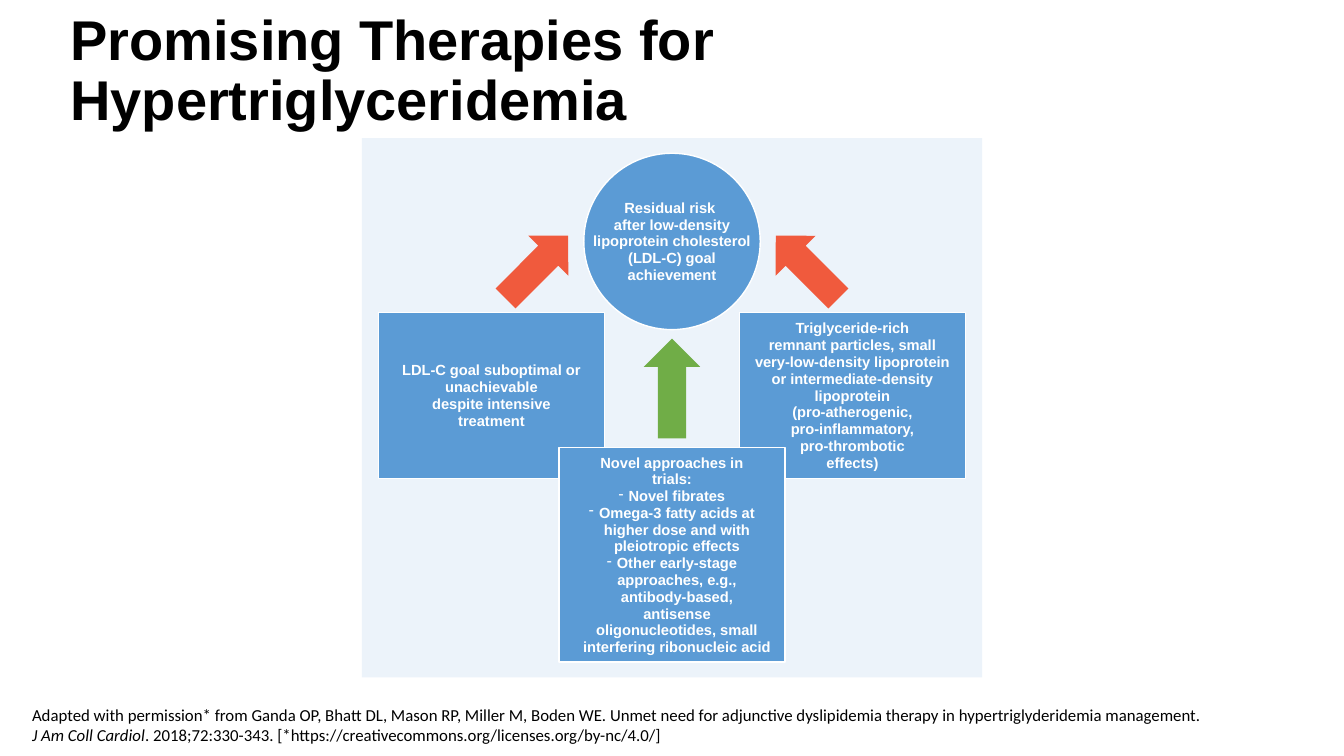
from lxml import etree
from pptx import Presentation
from pptx.dml.color import RGBColor
from pptx.enum.shapes import MSO_SHAPE
from pptx.enum.text import MSO_ANCHOR, PP_ALIGN
from pptx.oxml.ns import qn
from pptx.util import Inches, Pt

RECT, OVAL, ARROW = MSO_SHAPE.RECTANGLE, MSO_SHAPE.OVAL, MSO_SHAPE.UP_ARROW
MIDDLE, TOP = MSO_ANCHOR.MIDDLE, MSO_ANCHOR.TOP
CENTER, LEFT = PP_ALIGN.CENTER, PP_ALIGN.LEFT

WIDE, HIGH = 13.33, 7.5
COLORS = {"panel": "ECF3FA", "node": "5B9BD5", "risk": "F05A3D",
          "trial": "70AD47", "white": "FFFFFF", "black": "000000"}

RISK = ["Residual risk \nafter low-density",
        "lipoprotein cholesterol\n(LDL-C) goal\nachievement"]
GOAL = ["LDL-C goal suboptimal or\nunachievable\ndespite intensive\ntreatment"]
REMNANT = ["Triglyceride-rich\nremnant particles, small\nvery-low-density lipoprotein\n"
           "or intermediate-density\nlipoprotein\n(pro-atherogenic,\n"
           "pro-inflammatory,\npro-thrombotic\neffects)"]
TRIALS = ["Novel approaches in\ntrials:",
          "- Novel fibrates",
          "- Omega-3 fatty acids at\nhigher dose and with\npleiotropic effects",
          "- Other early-stage\napproaches, e.g.,\nantibody-based,\nantisense\n"
          "oligonucleotides, small\ninterfering ribonucleic acid"]
CREDIT = ["Adapted with permission* from Ganda OP, Bhatt DL, Mason RP, Miller M, Boden WE. "
          "Unmet need for adjunctive dyslipidemia therapy in hypertriglyderidemia management.",
          "_J Am Coll Cardiol_. 2018;72:330-343. "
          "[*https://creativecommons.org/licenses.org/by-nc/4.0/]"]


def rgb(name):
    return RGBColor.from_string(COLORS[name])


def dash(para):
    props = para._p.get_or_add_pPr()
    props.set("marL", str(Inches(0.1)))
    props.set("indent", str(Inches(-0.1)))
    etree.SubElement(props, qn("a:buChar")).set("char", "-")


def write(shape, paras, size=10.5, font="Arial", color="white", bold=True,
          align=CENTER, anchor=MIDDLE, gap=None, wrap=False):
    """A leading "- " makes a dash bullet; text between underscores is italic."""
    frame = shape.text_frame
    frame.word_wrap, frame.vertical_anchor = wrap, anchor
    for i, text in enumerate(paras):
        para = frame.paragraphs[0] if i == 0 else frame.add_paragraph()
        if text.startswith("- "):
            dash(para)
            text = text[2:]
        para.alignment = align
        if gap:
            para.line_spacing = gap
        for j, part in enumerate(text.split("_")):
            for k, line in enumerate(part.split("\n")):
                if k:
                    para.add_line_break()
                if not line:
                    continue
                run = para.add_run()
                run.text = line
                run.font.size, run.font.name = Pt(size), font
                run.font.bold, run.font.italic = bold, j % 2 == 1
                run.font.color.rgb = rgb(color)


def draw(slide, kind, box, fill, line=None, turn=0):
    shape = slide.shapes.add_shape(kind, *map(Inches, box))
    shape.shadow.inherit = False
    shape.fill.solid()
    shape.fill.fore_color.rgb = rgb(fill)
    if line:
        shape.line.color.rgb = rgb(line)
        shape.line.width = Pt(1)
    else:
        shape.line.fill.background()
    shape.rotation = turn
    return shape


def label(slide, box, paras, **style):
    write(slide.shapes.add_textbox(*map(Inches, box)), paras,
          color="black", align=LEFT, wrap=True, **style)


def diagram(slide, box):
    """Nodes and arrows, placed by offset from the panel's centre line and top."""
    left, top, wide, _ = box
    mid = left + wide / 2
    draw(slide, RECT, box, "panel")

    def place(shift, down, w, h):
        return mid + shift - w / 2, top + down, w, h

    def node(kind, spot, paras):
        write(draw(slide, kind, place(*spot), "node", "white"), paras, gap=Pt(12))

    node(OVAL, (0, 0.15, 1.75, 1.75), RISK)
    draw(slide, ARROW, place(0, 1.99, 0.56, 0.99), "trial")
    for side in (-1, 1):
        draw(slide, ARROW, place(1.34 * side, 0.84, 0.56, 0.88), "risk",
             turn=-44.9 * side)
    for side, paras in ((-1, GOAL), (1, REMNANT)):
        node(RECT, (1.79 * side, 1.73, 2.24, 1.65), paras)
    node(RECT, (0, 3.07, 2.24, 2.13), TRIALS)


def main():
    deck = Presentation()
    deck.slide_width, deck.slide_height = Inches(WIDE), Inches(HIGH)
    slide = deck.slides.add_slide(deck.slide_layouts[6])
    label(slide, (0.22, 6.94, WIDE, 0.5), CREDIT, size=12, font="Calibri",
          bold=False, anchor=TOP)
    diagram(slide, (3.59, 1.37, 6.15, 5.35))
    label(slide, (0.6, -0.01, 11.5, 1.45),
          ["Promising Therapies for Hypertriglyceridemia"], size=40, gap=0.9)
    deck.save("out.pptx")


if __name__ == "__main__":
    main()
